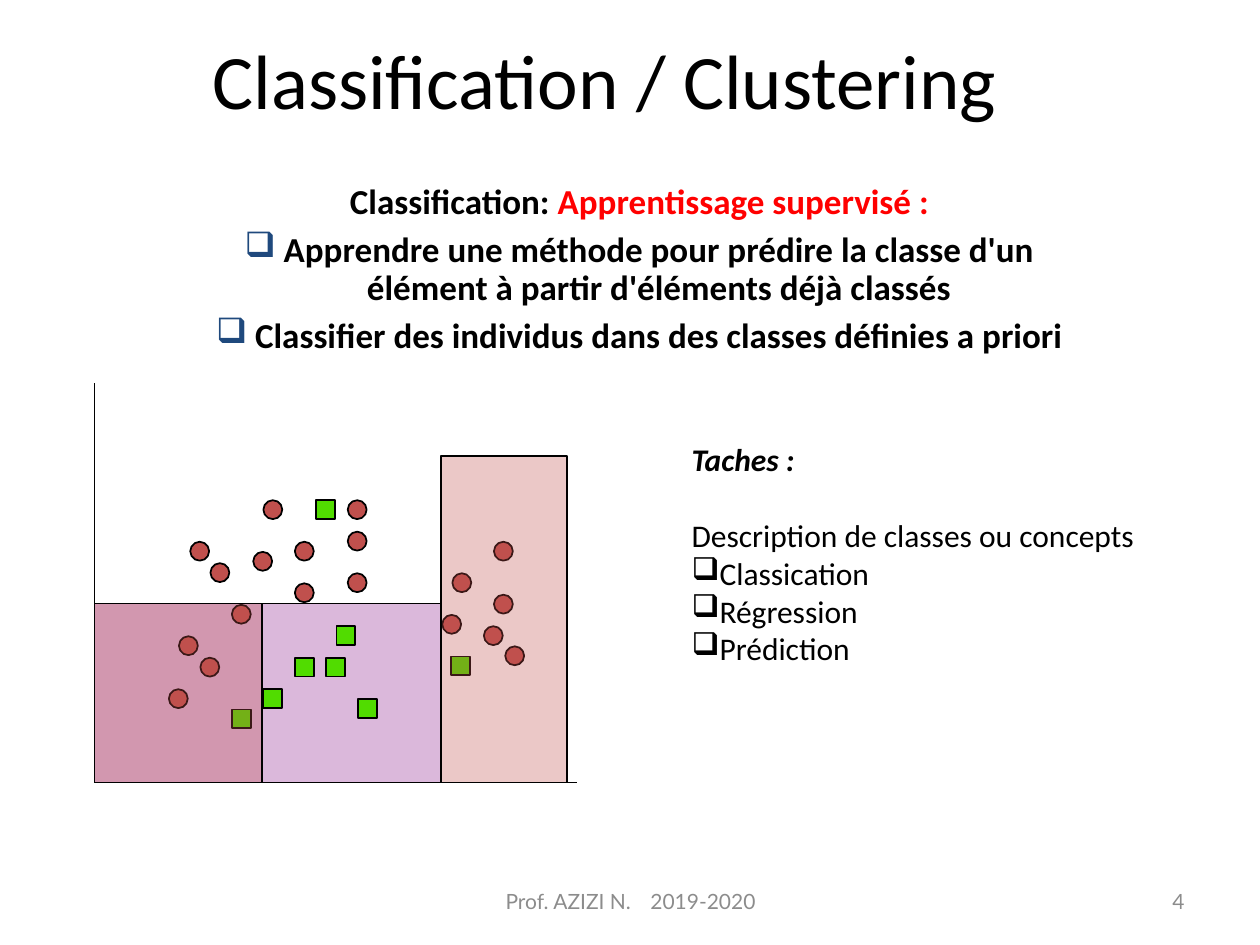
from dataclasses import dataclass

from lxml.etree import SubElement
from pptx import Presentation
from pptx.dml.color import RGBColor
from pptx.enum.shapes import MSO_CONNECTOR as CONN, MSO_SHAPE as SHAPE
from pptx.enum.text import MSO_ANCHOR as ANCHOR, PP_ALIGN as ALIGN
from pptx.oxml.ns import qn
from pptx.util import Inches, Pt

BLACK, RED, GREY = "000000", "FF0000", "8C8C8C"
BRICK, GREEN, PURPLE, NAVY = "C0504D", "51DC00", "800080", "1F497D"
MARK = 0.15
BASE = 6.21


@dataclass
class Zone:
    x: float
    y: float
    w: float
    color: str
    opacity: int


@dataclass
class Markers:
    kind: SHAPE
    color: str
    places: list[tuple[float, float]]


@dataclass
class Run:
    text: str
    color: str = BLACK
    bold: bool = False
    italic: bool = False


@dataclass
class Para:
    runs: list[Run]
    bullet: bool = False
    before: float = 0


LOW_ZONE = Zone(0.75, 4.79, 2.75, PURPLE, 28)
TOP_ZONES = [Zone(3.5, 3.62, 1, BRICK, 31), Zone(0.75, 4.79, 1.33, BRICK, 31)]
MARKERS = [
    Markers(SHAPE.RECTANGLE, GREEN, [
        (2.34, 5.22), (2.67, 4.97), (2.59, 5.22), (2.84, 5.55), (3.58, 5.21),
        (2.09, 5.47), (1.84, 5.63), (2.51, 3.97)]),
    Markers(SHAPE.OVAL, BRICK, [
        (1.51, 4.3), (1.67, 4.47), (2.01, 4.38), (2.34, 4.3), (1.42, 5.05),
        (2.76, 3.97), (1.84, 4.8), (2.34, 4.63), (2.76, 4.55), (1.59, 5.22),
        (1.34, 5.47), (2.09, 3.97), (2.76, 4.22), (3.92, 4.3), (3.59, 4.55),
        (3.51, 4.88), (3.84, 4.97), (4.01, 5.13), (3.92, 4.72)]),
]
DEFINITION = [
    Para([Run("Classification: ", bold=True),
          Run("Apprentissage supervisé :", RED, True)], before=6),
    Para([Run("Apprendre une méthode pour prédire la classe d'un élément "
              "à partir d'éléments déjà classés", bold=True)], True, 6),
    Para([Run("Classifier des individus dans des classes définies a priori",
              bold=True)], True, 6),
]
TASKS = [
    Para([Run("Taches :", bold=True, italic=True)]),
    Para([Run("Description de classes ou concepts")], before=22),
    *(Para([Run(task)], True)
      for task in ("Classication", "Régression", "Prédiction")),
]


def rgb(color: str) -> RGBColor:
    return RGBColor.from_string(color)


def add_block(s, kind: SHAPE, x: float, y: float, w: float, h: float,
              color: str, line: float):
    sp = s.shapes.add_shape(kind, Inches(x), Inches(y), Inches(w), Inches(h))
    sp.shadow.inherit = False
    sp.fill.solid()
    sp.fill.fore_color.rgb = rgb(color)
    sp.line.color.rgb = rgb(BLACK)
    sp.line.width = Pt(line)
    return sp


def add_zone(s, zone: Zone) -> None:
    sp = add_block(s, SHAPE.RECTANGLE, zone.x, zone.y, zone.w, BASE - zone.y,
                   zone.color, 0.75)
    clr = sp._element.spPr.find(qn("a:solidFill")).find(qn("a:srgbClr"))
    SubElement(clr, qn("a:alpha")).set("val", str(zone.opacity * 1000))


def add_axis(s, x1: float, y1: float, x2: float, y2: float) -> None:
    axis = s.shapes.add_connector(CONN.STRAIGHT, Inches(x1), Inches(y1),
                                  Inches(x2), Inches(y2))
    axis.line.color.rgb = rgb(BLACK)
    axis.line.width = Pt(1)
    SubElement(axis._element.spPr, qn("a:effectLst"))


def set_bullet(p, color: str) -> None:
    pPr = p._p.get_or_add_pPr()
    clr = SubElement(pPr, qn("a:buClr"))
    SubElement(clr, qn("a:srgbClr")).set("val", color)
    SubElement(pPr, qn("a:buChar")).set("char", "❑")


def add_text(s, x: float, y: float, w: float, h: float, paras: list[Para],
             size: float, font: str = "Calibri", align: ALIGN = ALIGN.LEFT,
             anchor: ANCHOR = ANCHOR.TOP, spacing: float = 1,
             hang: float = 0, bullet_color: str = BLACK):
    """Add a wrapped text box and return its text frame."""
    tf = s.shapes.add_textbox(Inches(x), Inches(y), Inches(w),
                              Inches(h)).text_frame
    tf.word_wrap = True
    tf.vertical_anchor = anchor
    tf.text = "\n".join("".join(run.text for run in para.runs)
                        for para in paras)
    for p, para in zip(tf.paragraphs, paras):
        p.alignment = align
        p.line_spacing = spacing
        p.space_before = Pt(para.before)
        if hang:
            pPr = p._p.get_or_add_pPr()
            pPr.set("marL", str(Inches(hang)))
            pPr.set("indent", str(-Inches(hang)))
        if para.bullet:
            set_bullet(p, bullet_color)
        p.runs[0].text = para.runs[0].text
        for _ in para.runs[1:]:
            p.add_run()
        for r, run in zip(p.runs, para.runs):
            r.text = run.text
            r.font.name, r.font.size = font, Pt(size)
            r.font.bold, r.font.italic = run.bold, run.italic
            r.font.color.rgb = rgb(run.color)
    return tf


def main() -> None:
    prs = Presentation()
    prs.slide_width, prs.slide_height = Inches(10), Inches(7.5)
    s = prs.slides.add_slide(prs.slide_layouts[6])

    add_zone(s, LOW_ZONE)
    add_axis(s, 0.75, 3.04, 0.75, BASE)
    add_axis(s, 0.75, BASE, 4.58, BASE)
    for group in MARKERS:
        for x, y in group.places:
            add_block(s, group.kind, x, y, MARK, MARK, group.color, 1)
    for zone in TOP_ZONES:
        add_zone(s, zone)

    add_text(s, 0.55, 0, 8.5, 1.25,
             [Para([Run("Classification / Clustering")])], 44,
             align=ALIGN.CENTER, anchor=ANCHOR.MIDDLE)
    add_text(s, 1.43, 1.41, 7.29, 2.22, DEFINITION, 20, align=ALIGN.CENTER,
             spacing=0.9, hang=0.31, bullet_color=NAVY)
    add_text(s, 5.39, 3.44, 4.13, 2.93, TASKS, 18)

    footer = [Run("Prof. AZIZI N.", GREY), Run(" ", GREY),
              Run("2019-2020", GREY)]
    tf = add_text(s, 3.42, 6.95, 3.17, 0.4, [Para(footer)], 12, "Lato",
                  ALIGN.CENTER, ANCHOR.MIDDLE)
    gap = tf.paragraphs[0].runs[1]
    gap._r.get_or_add_rPr().set("spc", "800")  # widen the space by 8 pt
    add_text(s, 7.17, 6.95, 2.33, 0.4, [Para([Run("4", GREY)])], 12, "Lato",
             ALIGN.RIGHT, ANCHOR.MIDDLE)

    prs.save("out.pptx")


if __name__ == "__main__":
    main()
